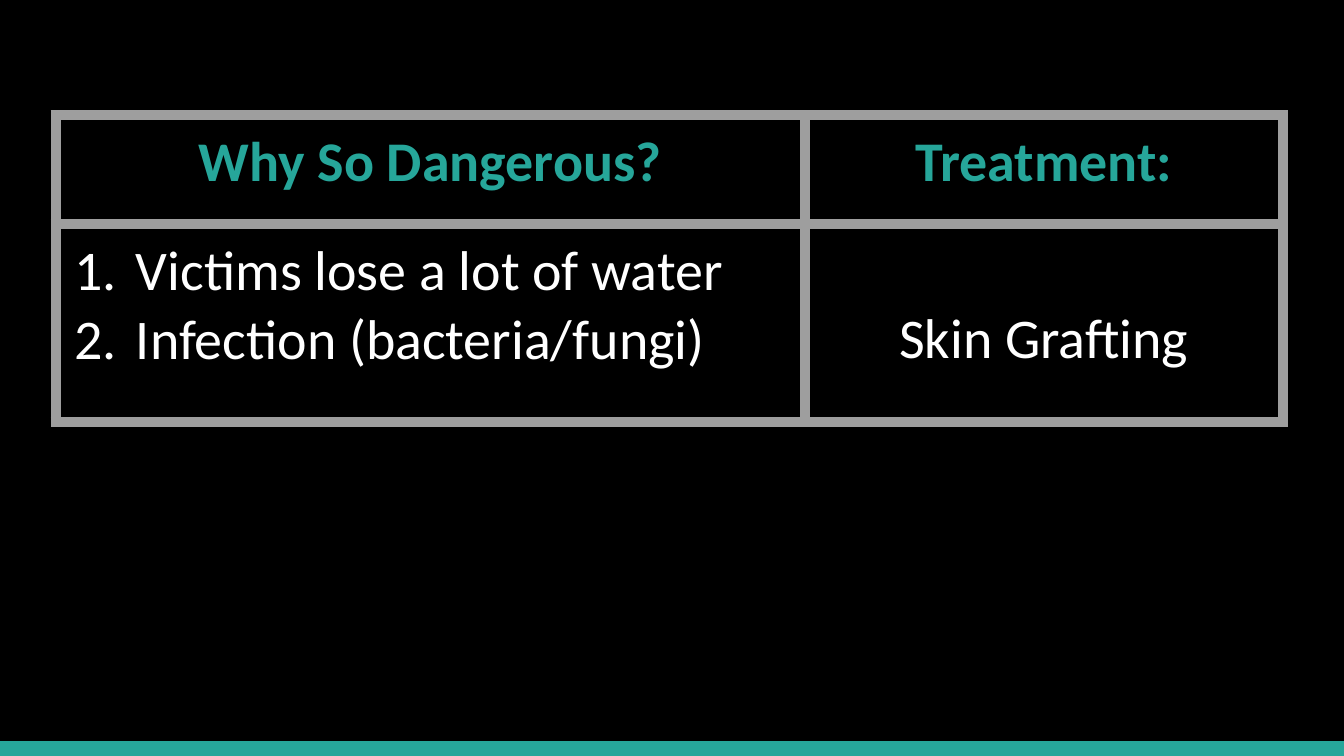
from lxml.etree import SubElement
from pptx import Presentation
from pptx.dml.color import RGBColor as RGB
from pptx.enum.shapes import MSO_SHAPE as Kind
from pptx.enum.text import PP_ALIGN as Align
from pptx.oxml import parse_xml
from pptx.oxml.ns import nsdecls, qn
from pptx.util import Cm, Pt

HUES = {"back": "000000", "teal": "26A69A", "text": "FFFFFF", "edge": "9E9E9E"}
COLS = (14.17, 9.02)
ROWS = (2.06, 3.73)
PAD = 0.25
LINE = 1.27


def paint(fill, hue):
    """Fill with one solid colour from the palette."""
    fill.solid()
    fill.fore_color.rgb = RGB.from_string(HUES[hue])


def frame(cell):
    """Draw a thick line on all four sides of a cell."""
    props = cell._tc.get_or_add_tcPr()
    for spot, side in enumerate(("lnL", "lnR", "lnT", "lnB")):
        props.insert(spot, parse_xml(
            f'<a:{side} {nsdecls("a")} w="{Pt(6)}"><a:solidFill>'
            f'<a:srgbClr val="{HUES["edge"]}"/></a:solidFill></a:{side}>'))


def number(para):
    """Give a paragraph a hanging automatic number."""
    props = para._p.get_or_add_pPr()
    props.set("marL", str(Cm(LINE)))
    props.set("indent", str(Cm(-1.17)))
    tint = SubElement(props, qn("a:buClr"))
    SubElement(tint, qn("a:srgbClr"), val=HUES["text"])
    SubElement(props, qn("a:buAutoNum"), type="arabicPeriod")


def write(cell, lines, hue, bold=False, listed=False, drop=0):
    """Fill a cell with centred or numbered lines."""
    cell.fill.background()
    frame(cell)
    cell.margin_left = cell.margin_right = cell.margin_bottom = Cm(PAD)
    cell.margin_top = Cm(PAD + drop)
    cell.text = "\n".join(lines)
    for para in cell.text_frame.paragraphs:
        if listed:
            number(para)
        else:
            para.alignment = Align.CENTER
        font = para.font
        font.name, font.size, font.bold = "Calibri", Pt(30), bold
        font.color.rgb = RGB.from_string(HUES[hue])


def add_grid(slide, left, top, wide, high):
    """Place the table of dangers and treatment in the given box."""
    grid = slide.shapes.add_table(2, 2, Cm(left), Cm(top), Cm(wide), Cm(high)).table
    grid.first_row = grid.horz_banding = False
    for col, part in zip(grid.columns, COLS):
        col.width = Cm(wide * part / sum(COLS))
    for row, part in zip(grid.rows, ROWS):
        row.height = Cm(high * part / sum(ROWS))
    for col, head in enumerate(("Why So Dangerous?", "Treatment:")):
        write(grid.cell(0, col), [head], "teal", bold=True)
    risks = ["Victims lose a lot of water", "Infection (bacteria/fungi)"]
    write(grid.cell(1, 0), risks, "text", listed=True)
    write(grid.cell(1, 1), ["Skin Grafting"], "text", drop=LINE)


def add_bar(slide, left, top, wide, high):
    """Place the teal bar in the given box."""
    bar = slide.shapes.add_shape(Kind.RECTANGLE, Cm(left), Cm(top), Cm(wide), Cm(high))
    bar.shadow.inherit = False
    paint(bar.fill, "teal")
    bar.line.fill.background()


def main():
    """Build and save the slide."""
    deck = Presentation()
    deck.slide_width, deck.slide_height = Cm(25.4), Cm(14.29)
    slide = deck.slides.add_slide(deck.slide_layouts[6])
    paint(slide.background.fill, "back")
    add_bar(slide, 0, 14.01, 25.4, 0.28)
    add_grid(slide, 1.05, 2.18, sum(COLS), sum(ROWS))
    deck.save("out.pptx")


if __name__ == "__main__":
    main()
